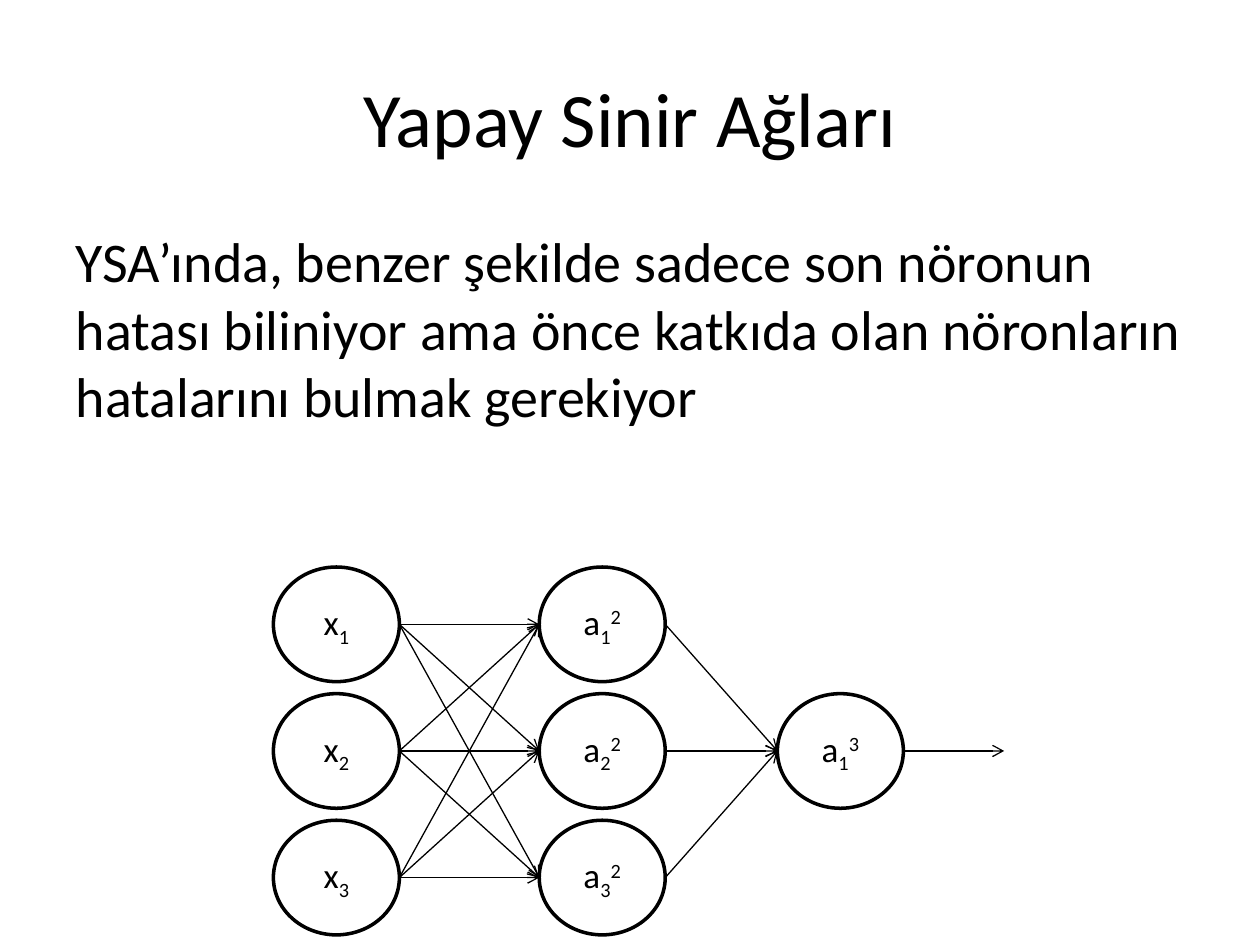
from itertools import product

from lxml.etree import SubElement
from pptx import Presentation
from pptx.dml.color import RGBColor
from pptx.enum.shapes import MSO_CONNECTOR, MSO_SHAPE
from pptx.enum.text import MSO_ANCHOR, PP_ALIGN
from pptx.oxml.ns import qn
from pptx.util import Inches, Pt

BLACK = RGBColor(0, 0, 0)
WHITE = RGBColor(255, 255, 255)
FONT = "Calibri"

NEURON_WIDTH, NEURON_HEIGHT = 1, 0.91
ROW_STEP = 1.005
LAYER_OFFSETS = (0, 2.11, 4)
OUTPUT_LENGTH = 0.8


def format_run(run, size, baseline=0):
    run.font.name = FONT
    run.font.size = Pt(size)
    run.font.color.rgb = BLACK
    if baseline:
        run.font._element.set("baseline", str(baseline * 1000))


def fill_placeholder(placeholder, box, text, size, alignment, anchor):
    placeholder.left, placeholder.top, placeholder.width, placeholder.height = map(Inches, box)
    frame = placeholder.text_frame
    frame.text = text
    frame.vertical_anchor = anchor
    paragraph = frame.paragraphs[0]
    paragraph.alignment = alignment
    format_run(paragraph.runs[0], size)
    return paragraph


def add_title(slide, box):
    fill_placeholder(slide.shapes.title, box, "Yapay Sinir Ağları", 44,
                     PP_ALIGN.CENTER, MSO_ANCHOR.MIDDLE)


def add_body(slide, box):
    statement = fill_placeholder(
        slide.placeholders[1], box,
        "YSA’ında, benzer şekilde sadece son nöronun hatası biliniyor ama önce "
        "katkıda olan nöronların hatalarını bulmak gerekiyor",
        32, PP_ALIGN.LEFT, MSO_ANCHOR.TOP)
    properties = statement._p.get_or_add_pPr()
    properties.set("marL", "0")
    properties.set("indent", "0")
    SubElement(properties, qn("a:buNone"))


def add_neuron(network, left, top, letter, subscript, superscript):
    neuron = network.shapes.add_shape(
        MSO_SHAPE.OVAL, Inches(left), Inches(top),
        Inches(NEURON_WIDTH), Inches(NEURON_HEIGHT))
    neuron.shadow.inherit = False
    neuron.fill.solid()
    neuron.fill.fore_color.rgb = WHITE
    neuron.line.color.rgb = BLACK
    neuron.line.width = Pt(2)
    neuron.text_frame.vertical_anchor = MSO_ANCHOR.MIDDLE
    label = neuron.text_frame.paragraphs[0]
    label.alignment = PP_ALIGN.CENTER
    for text, baseline in ((letter, 0), (subscript, -25), (superscript, 30)):
        if text:
            run = label.add_run()
            run.text = text
            format_run(run, 20, baseline)


def add_arrow(network, start, end):
    arrow = network.shapes.add_connector(
        MSO_CONNECTOR.STRAIGHT, *map(Inches, (*start, *end)))
    arrow.line.color.rgb = BLACK
    arrow.line.width = Pt(0.75)
    SubElement(arrow.line._get_or_add_ln(), qn("a:tailEnd"), type="arrow")
    SubElement(arrow._element.spPr, qn("a:effectLst"))


def add_network(slide, left, top):
    network = slide.shapes.add_group_shape()
    layers = (("x", "", (0, 1, 2)), ("a", "2", (0, 1, 2)), ("a", "3", (1,)))
    inputs, outputs = [], []
    for offset, (letter, superscript, rows) in zip(LAYER_OFFSETS, layers):
        layer_left = left + offset
        for number, row in enumerate(rows, 1):
            add_neuron(network, layer_left, top + row * ROW_STEP,
                       letter, str(number), superscript)
        middles = [top + row * ROW_STEP + NEURON_HEIGHT / 2 for row in rows]
        inputs.append([(layer_left, middle) for middle in middles])
        outputs.append([(layer_left + NEURON_WIDTH, middle) for middle in middles])

    for sources, targets in zip(outputs, inputs[1:]):
        for start, end in product(sources, targets):
            add_arrow(network, start, end)
    result_x, result_y = outputs[-1][0]
    add_arrow(network, (result_x, result_y), (result_x + OUTPUT_LENGTH, result_y))


def main():
    presentation = Presentation()
    presentation.slide_width = Inches(10)
    presentation.slide_height = Inches(7.5)
    slide = presentation.slides.add_slide(presentation.slide_layouts[1])
    add_title(slide, (0.5, 0.3, 9, 1.25))
    add_body(slide, (0.5, 1.75, 9, 5.33))
    add_network(slide, 2.17, 4.5)
    presentation.save("out.pptx")


if __name__ == "__main__":
    main()
